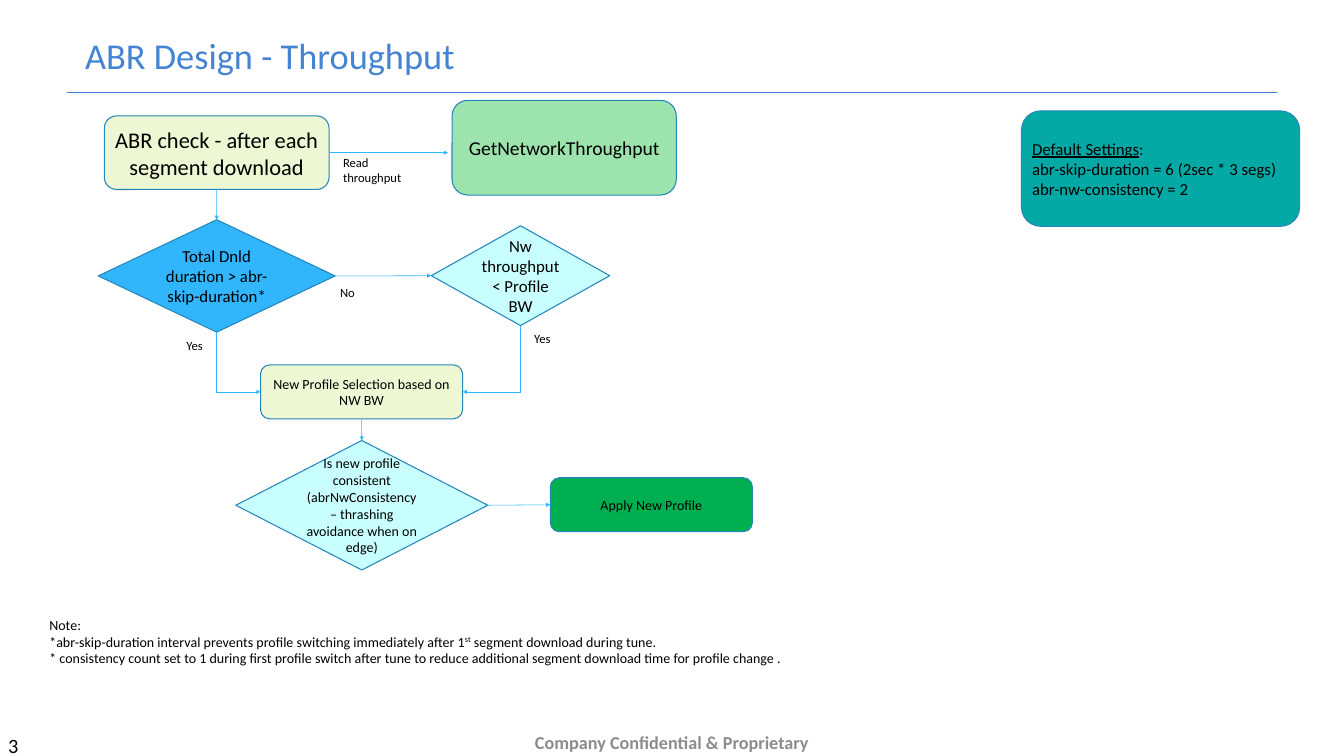
import pptx
import pptx.dml.color
import pptx.enum.shapes
import pptx.enum.text
import pptx.oxml
import pptx.oxml.ns
import pptx.util
from pptx.util import Inches

SHAPE = pptx.enum.shapes.MSO_SHAPE
CONNECTOR = pptx.enum.shapes.MSO_CONNECTOR
ALIGN = pptx.enum.text.PP_ALIGN
ANCHOR = pptx.enum.text.MSO_ANCHOR
TOP, LEFT, BOTTOM, RIGHT = range(4)
BLACK, TITLE_BLUE, ARROW_BLUE, EDGE_BLUE = "000000", "4584D3", "31B6FD", "2487BB"

# name: (shape, (left, top, width, height), fill, text size, text)
STEPS = {
    "check": (SHAPE.ROUNDED_RECTANGLE, (2.07, 2.3, 4.46, 1.46), "EDF7D3", 32,
              "ABR check - after each segment download"),
    "throughput": (SHAPE.ROUNDED_RECTANGLE, (8.97, 1.99, 4.45, 1.88), "9DE3AE", 28,
                   "GetNetworkThroughput"),
    "duration": (SHAPE.FLOWCHART_DECISION, (1.95, 4.36, 4.7, 2.23), "31B6FD", 24,
                 "Total Dnld duration > abr-skip-duration*"),
    "bandwidth": (SHAPE.FLOWCHART_DECISION, (8.56, 4.48, 3.54, 1.98), "C8FEFD", 24,
                  "Nw throughput < Profile BW"),
    "selection": (SHAPE.ROUNDED_RECTANGLE, (5.17, 7.24, 4.01, 1.07), "EDF7D3", 20,
                  "New Profile Selection based on NW BW"),
    "consistent": (SHAPE.FLOWCHART_DECISION, (4.68, 8.74, 5, 2.57), "C8FEFD", 20,
                   "Is new profile consistent (abrNwConsistency – thrashing "
                   "avoidance when on edge)"),
    "apply": (SHAPE.ROUNDED_RECTANGLE, (10.92, 9.48, 4.01, 1.07), "00B050", 20,
              "Apply New Profile"),
}
SETTINGS_PLACE = (20.27, 2.2, 5.52, 2.29)
SETTINGS = [[("Default Settings", "underline"), (":", "")],
            "abr-skip-duration = 6 (2sec * 3 segs)",
            "abr-nw-consistency = 2"]
STRAIGHT_ARROWS = [("check", BOTTOM, "duration", TOP),
                   ("duration", RIGHT, "bandwidth", LEFT),
                   ("selection", BOTTOM, "consistent", TOP),
                   ("consistent", RIGHT, "apply", LEFT)]
ELBOW_ARROWS = [("duration", BOTTOM, "selection", LEFT),
                ("bandwidth", BOTTOM, "selection", RIGHT)]
LABELS = [((6.71, 3.03, 1.37, 0.71), ["Read", "throughput"]),
          ((6.65, 5.6, 0.5, 0.4), ["No"]),
          ((10.5, 6.52, 0.53, 0.4), ["Yes"]),
          ((3.6, 6.66, 0.53, 0.4), ["Yes"])]
NOTES = ["Note:",
         [("*abr-skip-duration interval prevents profile switching immediately after 1", ""),
          ("st", "superscript"), (" segment download during tune.", "")],
         "* consistency count set to 1 during first profile switch after tune to reduce "
         "additional segment download time for profile change ."]


def rgb(value):
    return pptx.dml.color.RGBColor.from_string(value)


def write(box, lines, size, color=BLACK, align=ALIGN.LEFT, anchor=ANCHOR.TOP,
          wrap=True, bold=False, wide=False):
    """Fill a box; a line is a string or a list of (text, style) spans."""
    frame = box.text_frame
    frame.word_wrap = wrap
    frame.vertical_anchor = anchor
    if wide:
        frame.margin_left = frame.margin_right = Inches(0.36)
        frame.margin_top = frame.margin_bottom = Inches(0.18)
    for index, line in enumerate(lines):
        para = frame.add_paragraph() if index else frame.paragraphs[0]
        para.alignment = align
        para.font.name = "Calibri"
        para.font.size = pptx.util.Pt(size)
        para.font.bold = bold
        para.font.color.rgb = rgb(color)
        for text, style in [(line, "")] if isinstance(line, str) else line:
            span = para.add_run()
            span.text = text
            if style == "underline":
                span.font.underline = True
            elif style == "superscript":
                span.font._element.set("baseline", "30000")


def add_text(page, place, lines, size, **options):
    box = page.shapes.add_textbox(*map(Inches, place))
    write(box, lines, size, **options)
    return box


def add_node(page, kind, place, fill, size, lines, align=ALIGN.CENTER):
    node = page.shapes.add_shape(kind, *map(Inches, place))
    node.shadow.inherit = False
    node.fill.solid()
    node.fill.fore_color.rgb = rgb(fill)
    node.line.color.rgb = rgb(EDGE_BLUE)
    node.line.width = pptx.util.Pt(1.5)
    write(node, lines, size, align=align, anchor=ANCHOR.MIDDLE)
    return node


def add_line(page, start, end, color=ARROW_BLUE, width=0.79, arrow=True, kind=CONNECTOR.STRAIGHT):
    line = page.shapes.add_connector(kind, *map(Inches, start + end))
    line.line.color.rgb = rgb(color)
    line.line.width = pptx.util.Pt(width)
    if arrow:
        tail = pptx.oxml.parse_xml(
            f'<a:tailEnd {pptx.oxml.ns.nsdecls("a")} type="triangle"/>')
        line.line._get_or_add_ln().append(tail)
    line._element.spPr.append(
        pptx.oxml.parse_xml(f'<a:effectLst {pptx.oxml.ns.nsdecls("a")}/>'))
    return line


def join(page, start, start_side, end, end_side, kind=CONNECTOR.STRAIGHT):
    line = add_line(page, (0, 0), (1, 1), kind=kind)
    line.begin_connect(start, start_side)
    line.end_connect(end, end_side)
    return line


def bend_once(line):
    """Turn an elbow into a single bend that runs down first, then sideways."""
    x, y, across, down = line.left, line.top, line.width, line.height
    rightward = line.end_x > line.begin_x
    line.left, line.top = x + (across - down) // 2, y + (down - across) // 2
    line.width, line.height = down, across
    properties = line._element.spPr
    properties.prstGeom.set("prst", "bentConnector2")
    properties.xfrm.set("rot", str((270 if rightward else 90) * 60000))
    properties.xfrm.set("flipH", "1" if rightward else "0")


def main():
    deck = pptx.Presentation()
    deck.slide_width, deck.slide_height = Inches(26.67), Inches(15)
    page = deck.slides.add_slide(deck.slide_layouts[6])

    add_line(page, (1.33, 1.83), (25.34, 1.83), TITLE_BLUE, 1, arrow=False)
    add_text(page, (-0.2, 14.37, 1.2, 0.85), ["3"], 29, wrap=False, wide=True)
    add_text(page, (0, 14.46, 26.67, 0.54), ["Company Confidential & Proprietary"], 26,
             color="8C8C8C", align=ALIGN.CENTER, anchor=ANCHOR.MIDDLE, bold=True, wide=True)
    title = add_text(page, (1.33, 0.51, 24, 1.31), ["ABR Design - Throughput"], 52,
                     color=TITLE_BLUE, anchor=ANCHOR.MIDDLE, wide=True)
    title.text_frame.paragraphs[0].line_spacing = 0.8

    nodes = {name: add_node(page, kind, place, fill, size, [text])
             for name, (kind, place, fill, size, text) in STEPS.items()}
    add_node(page, SHAPE.ROUNDED_RECTANGLE, SETTINGS_PLACE, "04A8A4", 24, SETTINGS, ALIGN.LEFT)

    read_arrow = add_line(page, (6.53, 3.03), (8.89, 3.03))
    read_arrow.begin_connect(nodes["check"], RIGHT)
    for start, start_side, end, end_side in STRAIGHT_ARROWS:
        join(page, nodes[start], start_side, nodes[end], end_side)
    for start, start_side, end, end_side in ELBOW_ARROWS:
        bend_once(join(page, nodes[start], start_side, nodes[end], end_side, CONNECTOR.ELBOW))

    for place, lines in LABELS:
        add_text(page, place, lines, 18, wrap=False)
    add_text(page, (0.88, 12.18, 15.59, 1.11), NOTES, 20)
    deck.save("out.pptx")


if __name__ == "__main__":
    main()
